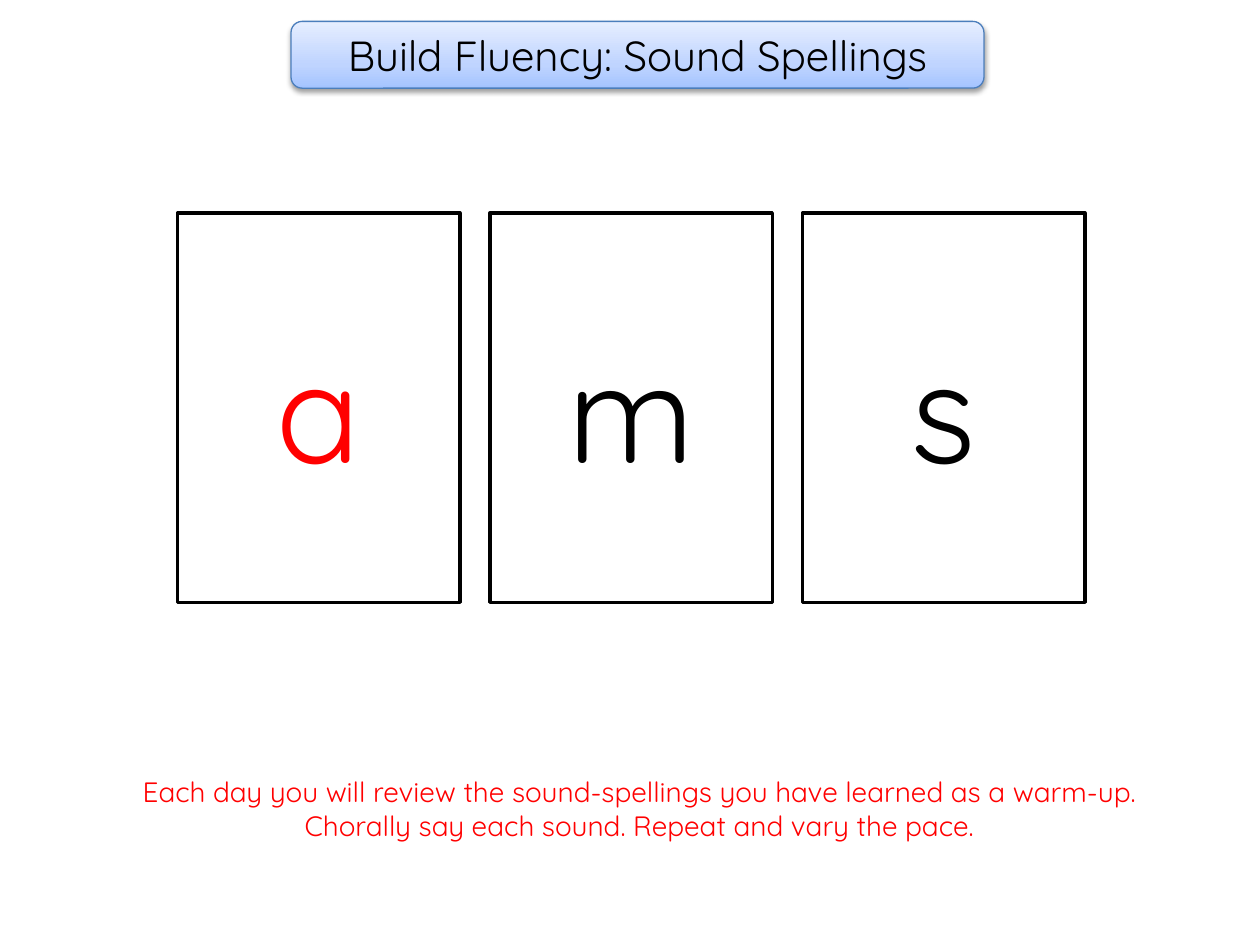
import copy

import pptx
import pptx.dml.color
import pptx.enum.shapes
import pptx.enum.text
import pptx.oxml
import pptx.oxml.ns
import pptx.util

THEME = {
    "font": "Quicksand",
    "black": "000000",
    "red": "FF0000",
    "white": "FFFFFF",
    "title_line": "4B7EBC",
    "title_gradient": [(0, "A4C4FF"), (0.35, "BFD4FF"), (1, "E6EEFF")],
    "title_size": 24,
    "note_size": 16,
    "letter_size": 80,
}
SHAPES = pptx.enum.shapes.MSO_SHAPE
ANCHORS = pptx.enum.text.MSO_ANCHOR

deck = pptx.Presentation()
deck.slide_width = pptx.util.Inches(10)
deck.slide_height = pptx.util.Inches(7.5)
page = deck.slides.add_slide(deck.slide_layouts[6])


def rgb(name):
    return pptx.dml.color.RGBColor.from_string(name)


def write(box, lines, size, color, anchor):
    """Fill a box with centred paragraphs in the theme font."""
    frame = box.text_frame
    for name, value in {"word_wrap": True, "vertical_anchor": anchor}.items():
        setattr(frame, name, value)
    for index, line in enumerate(lines):
        para = frame.paragraphs[0] if index == 0 else frame.add_paragraph()
        para.alignment = pptx.enum.text.PP_ALIGN.CENTER
        span = para.add_run()
        span.text = line
        span.font.color.rgb = rgb(color)
        for name, value in {"name": THEME["font"], "size": pptx.util.Pt(size)}.items():
            setattr(span.font, name, value)


# Title banner
banner = page.shapes.add_shape(
    SHAPES.ROUNDED_RECTANGLE, *map(pptx.util.Inches, (2.31, 0.17, 5.5, 0.53)))
banner.line.color.rgb = rgb(THEME["title_line"])
banner.line.width = pptx.util.Pt(0.75)
write(banner, ["Build Fluency: Sound Spellings"], THEME["title_size"],
      THEME["black"], ANCHORS.MIDDLE)

# Banner gradient: the default two stops plus a middle one
banner.fill.gradient()
banner.fill.gradient_angle = 90
stop_list = banner._element.spPr.find(".//" + pptx.oxml.ns.qn("a:gsLst"))
stop_list.insert(1, copy.deepcopy(stop_list[0]))
for stop, (position, color) in zip(banner.fill.gradient_stops, THEME["title_gradient"]):
    stop.position = position
    stop.color.rgb = rgb(color)

# Banner shadow
banner.shadow.inherit = False
effects = banner._element.spPr.find(pptx.oxml.ns.qn("a:effectLst"))
effects.append(pptx.oxml.parse_xml(
    f'<a:outerShdw {pptx.oxml.ns.nsdecls("a")} blurRad="{pptx.util.Pt(3.1)}" '
    f'dist="{pptx.util.Pt(1.6)}" dir="5400000" rotWithShape="0">'
    f'<a:srgbClr val="{THEME["black"]}"><a:alpha val="38000"/></a:srgbClr>'
    '</a:outerShdw>'))

# Instructions
note = page.shapes.add_textbox(*map(pptx.util.Inches, (0.34, 6.1, 9.47, 0.91)))
write(note, ["Each day you will review the sound-spellings you have learned as a warm-up.",
             "Chorally say each sound. Repeat and vary the pace."],
      THEME["note_size"], THEME["red"], ANCHORS.TOP)

# Letter cards, one per column; the vowel is red
first_left, column_step = 1.41, 2.48
for column, letter in enumerate("ams"):
    left = first_left + column * column_step
    card = page.shapes.add_shape(
        SHAPES.RECTANGLE, *map(pptx.util.Inches, (left, 1.69, 2.24, 3.09)))
    card.shadow.inherit = False
    card.fill.solid()
    card.fill.fore_color.rgb = rgb(THEME["white"])
    card.line.color.rgb = rgb(THEME["black"])
    card.line.width = pptx.util.Pt(2)
    color = THEME["red"] if letter in "aeiou" else THEME["black"]
    write(card, [letter], THEME["letter_size"], color, ANCHORS.MIDDLE)

deck.save("out.pptx")
